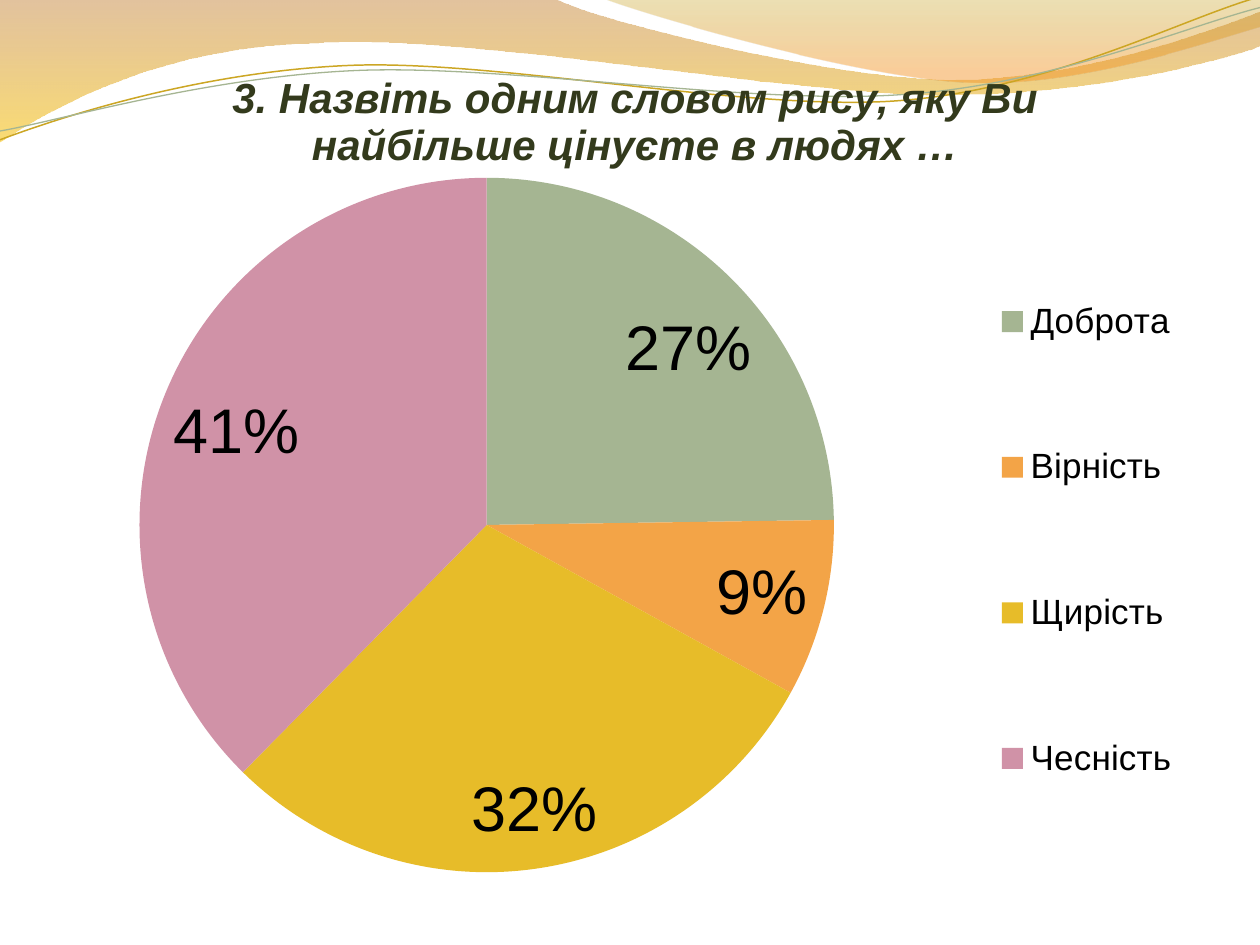
from lxml.etree import SubElement
from pptx import Presentation
from pptx.chart.data import CategoryChartData
from pptx.dml.color import RGBColor
from pptx.enum.chart import XL_CHART_TYPE, XL_LABEL_POSITION, XL_LEGEND_POSITION
from pptx.oxml import parse_xml
from pptx.oxml.ns import qn
from pptx.util import Inches, Pt

BLACK = RGBColor(0x00, 0x00, 0x00)
OLIVE = RGBColor(0x33, 0x3A, 0x1C)
SAGE = RGBColor(0xA5, 0xB5, 0x92)
ORANGE = RGBColor(0xF3, 0xA4, 0x47)
GOLD = RGBColor(0xE7, 0xBC, 0x29)
PINK = RGBColor(0xD0, 0x92, 0xA7)
BROWN = RGBColor(0xC0, 0x7A, 0x28)
YELLOW = RGBColor(0xF7, 0xBF, 0x00)
MUSTARD = RGBColor(0xC0, 0x97, 0x09)
AMBER = RGBColor(0xF5, 0x93, 0x20)
THREAD = RGBColor(0xCC, 0xA6, 0x24)
FONT = "Arial"
UNITS = 1000  # freeform units to the inch
CHART_NS = "http://schemas.openxmlformats.org/drawingml/2006/chart"

deck = Presentation()
deck.slide_width, deck.slide_height = Inches(10), Inches(7.5)
page = deck.slides.add_slide(deck.slide_layouts[6])


def add_wave(pieces, closed):
    """Draw an outline; two numbers are a line, six are a Bezier curve."""
    points = [(round(piece[i] * UNITS), round(piece[i + 1] * UNITS))
              for piece in pieces for i in range(0, len(piece), 2)]
    builder = page.shapes.build_freeform(*points[0], scale=Inches(1) / UNITS)
    builder.add_line_segments(points[1:], close=closed)
    wave = builder.convert_to_shape()
    wave.shadow.inherit = False
    # Join each three segments of a curve into one Bezier segment
    segments = iter(list(wave.element.iter(qn("a:lnTo"))))
    for piece in pieces[1:]:
        first = next(segments)
        if len(piece) == 6:
            curve = first.makeelement(qn("a:cubicBezTo"))
            first.addprevious(curve)
            for segment in (first, next(segments), next(segments)):
                curve.append(segment[0])
                segment.getparent().remove(segment)
    return wave


def set_layout(parent, **shares):
    """Place a chart part by shares of the chart's size; labels by offsets."""
    for old in parent.findall(qn("c:layout")):
        parent.remove(old)
    is_label = parent.tag == qn("c:dLbl")
    modes = {} if is_label else {"xMode": "edge", "yMode": "edge"}
    values = "".join(f'<c:{name} val="{value}"/>' for name, value in {**modes, **shares}.items())
    target = '<c:layoutTarget val="inner"/>' if parent.tag == qn("c:plotArea") else ""
    layout = parse_xml(f'<c:layout xmlns:c="{CHART_NS}"><c:manualLayout>{target}{values}'
                       "</c:manualLayout></c:layout>")
    overlay = parent.find(qn("c:overlay"))
    parent.insert(int(is_label) if overlay is None else parent.index(overlay), layout)


# Translucent waves along the top
bands = [
    ([(0, 0), (4.4, -0.01), (4.76, 0.17, 6.64, 0.63, 7.58, 0.63),
      (8.53, 0.63, 9.58, 0.26, 10, 0.09), (10.01, 0.36),
      (9.83, 0.44, 8.7, 0.76, 7.46, 0.75), (6.22, 0.75, 3.82, 0.28, 2.57, 0.34),
      (1.29, 0.36, 0.46, 0.83, -0.01, 1.13)],
     [(0, BROWN, 45), (1, YELLOW, 55)]),
    ([(4.79, -0.01), (5.09, 0.11, 6.82, 0.62, 7.69, 0.65),
      (8.56, 0.69, 9.61, 0.32, 10, 0.21), (10, 0)],
     [(0, MUSTARD, 30), (0.8, AMBER, 45)]),
]
for pieces, stops in bands:
    band = add_wave(pieces, True)
    band.line.fill.background()
    band.fill.gradient()
    band.fill.gradient_angle = 270
    for stop, (position, color, _) in zip(band.fill.gradient_stops, stops):
        stop.position = position
        stop.color.rgb = color
    colors = band.element.spPr.find(qn("a:gradFill")).iter(qn("a:srgbClr"))
    for node, (_, _, opacity) in zip(colors, stops):
        SubElement(node, qn("a:alpha"), val=str(opacity * 1000))

# Thin threads over the waves
threads = [
    ([(0, 1.11), (0.48, 0.93, 1.58, 0.57, 2.77, 0.52), (3.95, 0.47, 5.93, 0.89, 7.13, 0.8),
      (8.33, 0.71, 9.38, 0.15, 9.98, -0.02)], THREAD, 0.85),
    ([(0, 1.04), (0.47, 0.96, 1.64, 0.61, 2.83, 0.56), (4.03, 0.51, 5.97, 0.84, 7.17, 0.75),
      (8.36, 0.67, 9.41, 0.21, 10, 0.06)], SAGE, 0.75),
]
for pieces, color, width in threads:
    thread = add_wave(pieces, False)
    thread.fill.background()
    thread.line.color.rgb = color
    thread.line.width = Pt(width)

# Pie chart of the answers, with the shift of each label
answers = [("Доброта", 0.27, SAGE, (0.022, 0.036)), ("Вірність", 0.09, ORANGE, (-0.007, 0.024)),
           ("Щирість", 0.32, GOLD, (0.052, -0.019)), ("Чесність", 0.41, PINK, (0.001, 0.001))]
data = CategoryChartData(number_format="0%")
data.categories = [answer[0] for answer in answers]
data.add_series("Series 1", [answer[1] for answer in answers])
chart = page.shapes.add_chart(XL_CHART_TYPE.PIE, Inches(0.31), Inches(0.23),
                              Inches(9.45), Inches(6.83), data).chart
chart.font.name, chart.font.size = FONT, Pt(10)
chart.font.color.rgb = BLACK
plot = chart.plots[0]
plot.vary_by_categories = True
series = plot.series[0]
set_layout(chart.element.find(".//" + qn("c:plotArea")), x=0.084, y=0.173, w=0.584, h=0.807)

# Value labels
labels = series.data_labels
labels.show_value = True
labels.show_percentage = False
labels.number_format, labels.number_format_is_linked = "0%", False
labels.position = XL_LABEL_POSITION.INSIDE_END
labels.font.name, labels.font.size = FONT, Pt(36)
labels.font.color.rgb = BLACK

# Slice colours and label shifts
for index, (_, _, color, _) in enumerate(answers):
    point = series.points[index]
    point.format.fill.solid()
    point.format.fill.fore_color.rgb = color
    point.format.line.fill.background()
    label = point.data_label
    label.position = XL_LABEL_POSITION.INSIDE_END
    label.font.name, label.font.size = FONT, Pt(36)
    label.font.color.rgb = BLACK
for node, (_, _, _, (right, down)) in zip(chart.element.iter(qn("c:dLbl")), answers):
    set_layout(node, x=right, y=down)

# Chart title
chart.has_title = True
span = chart.chart_title.text_frame.paragraphs[0].add_run()
span.text = "3. Назвіть одним словом рису, яку Ви найбільше цінуєте в людях …"
span.font.name, span.font.size = FONT, Pt(24)
span.font.bold = span.font.italic = True
span.font.color.rgb = OLIVE
set_layout(chart.element.find(".//" + qn("c:title")), x=0.156, y=0.039)

# Legend
chart.has_legend = True
legend = chart.legend
legend.position = XL_LEGEND_POSITION.RIGHT
legend.include_in_layout = False
legend.font.name, legend.font.size = FONT, Pt(20)
legend.font.color.rgb = BLACK
set_layout(chart.element.find(".//" + qn("c:legend")), x=0.785, y=0.194, w=0.19, h=0.8)

deck.save("out.pptx")
